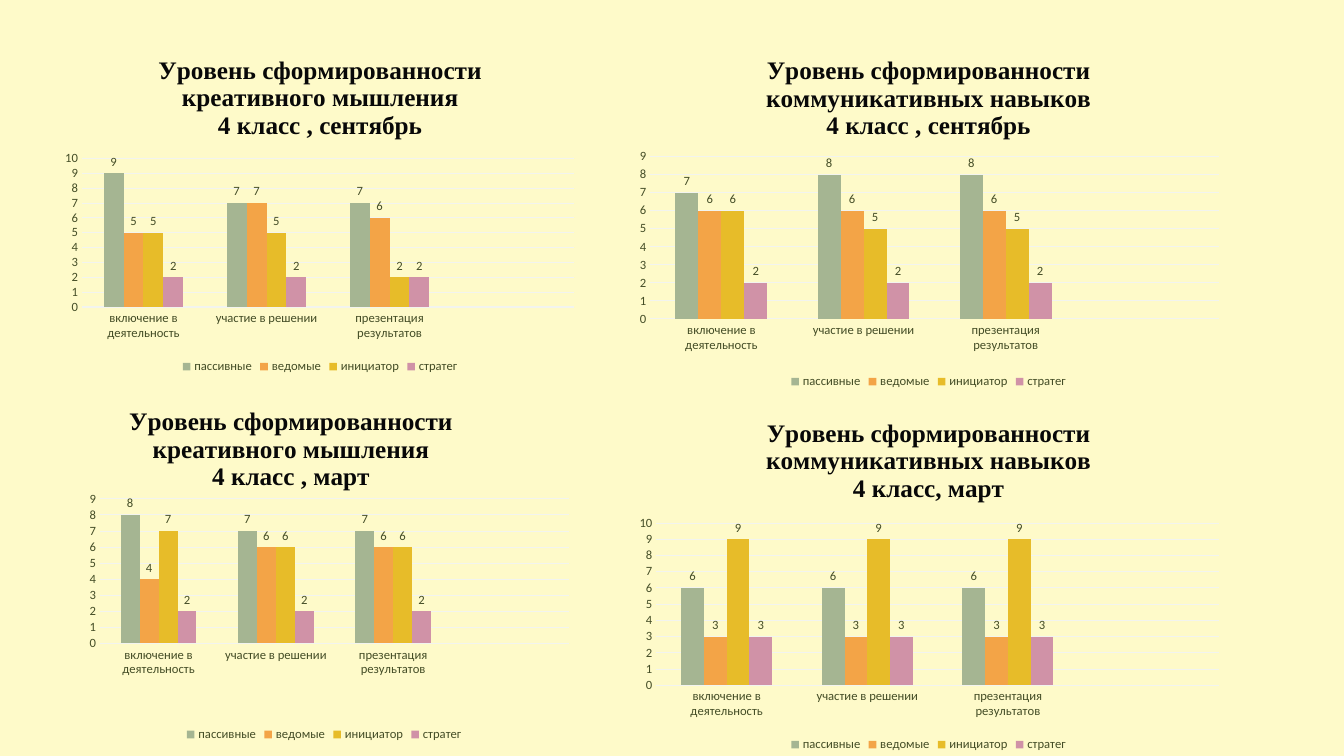
from dataclasses import dataclass

from lxml.etree import SubElement
from pptx import Presentation
from pptx.chart.data import CategoryChartData
from pptx.dml.color import RGBColor
from pptx.enum.chart import XL_CHART_TYPE, XL_LABEL_POSITION, XL_LEGEND_POSITION, XL_TICK_MARK
from pptx.oxml import parse_xml
from pptx.oxml.ns import nsdecls, qn
from pptx.util import Inches, Pt


@dataclass(frozen=True)
class Theme:
    background: str = "FEFAC9"
    title: str = "080808"
    text: str = "444D26"
    grid: str = "F2F4EF"
    series: tuple = ("A5B592", "F3A447", "E7BC29", "D092A7")
    title_font: str = "Times New Roman"
    text_font: str = "Calibri"
    title_size: int = 18
    text_size: int = 9
    line_width: float = 0.75


@dataclass(frozen=True)
class LevelChart:
    skill: str
    period: str
    frame: tuple
    plot_area: tuple
    maximum: int
    values: tuple
    title_corner: tuple = ()


THEME = Theme()
STAGES = ("включение в деятельность", "участие в решении", "презентация результатов")
ROLES = ("пассивные", "ведомые", "инициатор", "стратег")
CREATIVE = "креативного мышления"
COMMUNICATION = "коммуникативных навыков"
LEVEL_CHARTS = (
    LevelChart(CREATIVE, "4 класс , сентябрь", (0.55, 0.4, 5.25, 3.35),
               (0.05, 0.35, 0.93, 0.44), 10,
               ((9, 7, 7), (5, 7, 6), (5, 5, 2), (2, 2, 2))),
    LevelChart(CREATIVE, "4 класс , март", (0.63, 3.9, 5.17, 3.5),
               (0.07, 0.3, 0.9, 0.41), 9,
               ((8, 7, 7), (4, 6, 6), (7, 6, 6), (2, 2, 2)), (0.12, 0.03)),
    LevelChart(COMMUNICATION, "4 класс , сентябрь", (6.21, 0.4, 6, 3.5),
               (0.04, 0.33, 0.94, 0.46), 9,
               ((7, 8, 8), (6, 6, 6), (6, 5, 5), (2, 2, 2))),
    LevelChart(COMMUNICATION, "4 класс, март", (6.21, 4, 6, 3.5),
               (0.05, 0.34, 0.93, 0.46), 10,
               ((6, 6, 6), (3, 3, 3), (9, 9, 9), (3, 3, 3))),
)


def color(value):
    return RGBColor.from_string(value)


def style_font(font, name=THEME.text_font, size=THEME.text_size, value=THEME.text, bold=False):
    font.name = name
    font.size = Pt(size)
    font.bold = bold
    font.color.rgb = color(value)


def style_line(line):
    line.color.rgb = color(THEME.grid)
    line.width = Pt(THEME.line_width)


def set_layout(element, position, inner=False):
    """Place a chart part by fractions of the chart: x, y and optionally w, h."""
    for old_layout in element.findall(qn("c:layout")):
        element.remove(old_layout)
    layout = parse_xml(f"<c:layout {nsdecls('c')}><c:manualLayout/></c:layout>")
    settings = [("layoutTarget", "inner")] if inner else []
    settings += [("xMode", "edge"), ("yMode", "edge")]
    settings += zip("xywh", position)
    for tag, value in settings:
        SubElement(layout[0], qn(f"c:{tag}")).set("val", str(value))
    text = element.find(qn("c:tx"))
    if text is None:
        element.insert(0, layout)
    else:
        text.addnext(layout)


def clear_chart_background(chart):
    chart.element.find(qn("c:chart")).addnext(parse_xml(
        f"<c:spPr {nsdecls('c', 'a')}><a:noFill/><a:ln><a:noFill/></a:ln></c:spPr>"))


def add_title(chart, level):
    title = chart.chart_title
    title.include_in_layout = False
    frame = title.text_frame
    frame.text = f"Уровень сформированности {level.skill}\n{level.period}"
    for paragraph in frame.paragraphs:
        style_font(paragraph.font, THEME.title_font, THEME.title_size, THEME.title, True)
    if level.title_corner:
        set_layout(title.element, level.title_corner)


def style_axes(chart, maximum):
    for axis in (chart.category_axis, chart.value_axis):
        axis.major_tick_mark = axis.minor_tick_mark = XL_TICK_MARK.NONE
        style_font(axis.tick_labels.font)
    style_line(chart.category_axis.format.line)
    value_axis = chart.value_axis
    value_axis.minimum_scale = 0
    value_axis.maximum_scale = maximum
    value_axis.major_unit = 1
    value_axis.format.line.fill.background()
    style_line(value_axis.major_gridlines.format.line)


def style_series(plot):
    plot.gap_width = 219
    plot.overlap = 0
    plot.vary_by_categories = False
    for series, fill in zip(plot.series, THEME.series):
        series.format.fill.solid()
        series.format.fill.fore_color.rgb = color(fill)
        labels = series.data_labels
        labels.show_value = True
        labels.position = XL_LABEL_POSITION.OUTSIDE_END
        style_font(labels.font)


def add_level_chart(slide, level):
    """Draw one chart; an unnamed fourth slot stays empty on the right."""
    data = CategoryChartData()
    data.categories = STAGES
    for role, values in zip(ROLES, level.values):
        data.add_series(role, (*values, None))
    frame = slide.shapes.add_chart(
        XL_CHART_TYPE.COLUMN_CLUSTERED, *(Inches(length) for length in level.frame), data)
    chart = frame.chart
    style_font(chart.font)
    clear_chart_background(chart)
    add_title(chart, level)
    style_axes(chart, level.maximum)
    style_series(chart.plots[0])
    chart.has_legend = True
    chart.legend.position = XL_LEGEND_POSITION.BOTTOM
    chart.legend.include_in_layout = False
    style_font(chart.legend.font)
    set_layout(chart.element.find(".//" + qn("c:plotArea")), level.plot_area, inner=True)


def main():
    presentation = Presentation()
    presentation.slide_width = Inches(13.33)
    presentation.slide_height = Inches(7.5)
    slide = presentation.slides.add_slide(presentation.slide_layouts[6])
    slide.background.fill.solid()
    slide.background.fill.fore_color.rgb = color(THEME.background)
    for level in LEVEL_CHARTS:
        add_level_chart(slide, level)
    presentation.save("out.pptx")


if __name__ == "__main__":
    main()
